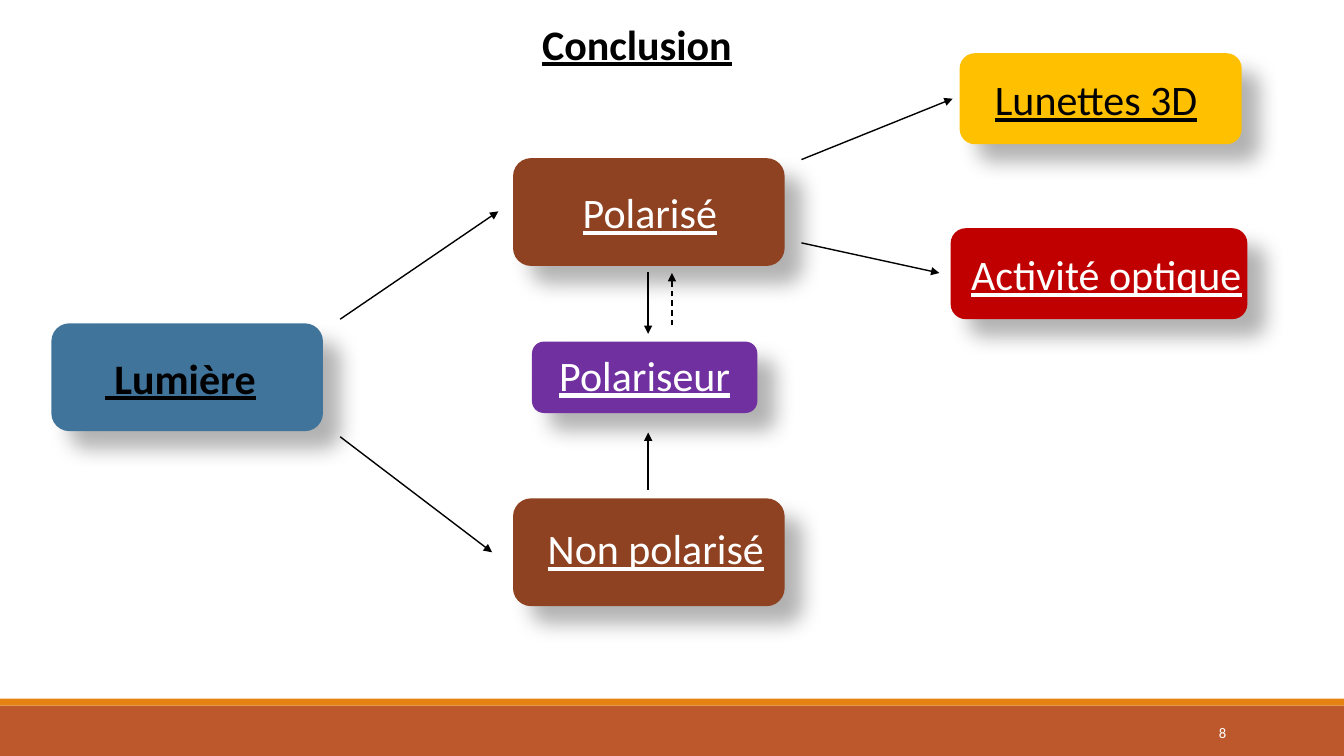
from dataclasses import dataclass

from lxml import etree
from pptx import Presentation
from pptx.dml.color import RGBColor
from pptx.enum import dml, shapes, text
from pptx.oxml import ns
from pptx.util import Pt


@dataclass(frozen=True)
class Theme:
    font: str = "Calibri"
    label_size: float = 30
    number_size: float = 10.5
    black: str = "000000"
    white: str = "FFFFFF"
    light: str = "40749B"
    state: str = "8E4221"
    polarizer: str = "7030A0"
    glasses: str = "FFC000"
    activity: str = "C00000"
    band: str = "BD582C"
    stripe: str = "E48312"


def add_child(parent, tag, **attributes):
    child = etree.SubElement(parent, ns.qn(tag))
    for name, value in attributes.items():
        child.set(name, str(value))
    return child


def write(frame, words, *, theme, color, size, bold=False, underline=False,
          align=text.PP_ALIGN.LEFT, anchor=text.MSO_ANCHOR.MIDDLE):
    frame.word_wrap = True
    frame.auto_size = text.MSO_AUTO_SIZE.NONE
    frame.vertical_anchor = anchor
    paragraph = frame.paragraphs[0]
    paragraph.alignment = align
    run = paragraph.add_run()
    run.text = words
    font = run.font
    font.name, font.size = theme.font, Pt(size)
    font.bold, font.underline = bold, underline
    font.color.rgb = RGBColor.from_string(color)


class Diagram:
    def __init__(self, slide, theme):
        self.slide = slide
        self.theme = theme

    def title(self, words, *box):
        heading = self.slide.shapes.title
        heading.left, heading.top, heading.width, heading.height = map(Pt, box)
        write(heading.text_frame, words, theme=self.theme, color=self.theme.black,
              size=self.theme.label_size, bold=True, underline=True,
              anchor=text.MSO_ANCHOR.TOP)

    def block(self, fill, *box, kind=shapes.MSO_SHAPE.RECTANGLE):
        block = self.slide.shapes.add_shape(kind, *map(Pt, box))
        block.shadow.inherit = False
        block.fill.solid()
        block.fill.fore_color.rgb = RGBColor.from_string(fill)
        block.line.fill.background()
        return block

    def node(self, words, fill, *box, indent, lift=0, color=None, bold=False):
        """Rounded box with a soft shadow; indent and lift place its label."""
        node = self.block(fill, *box, kind=shapes.MSO_SHAPE.ROUNDED_RECTANGLE)
        effects = node.element.spPr.find(ns.qn("a:effectLst"))
        shadow = add_child(effects, "a:outerShdw", blurRad=Pt(15), dist=Pt(18),
                           dir=45 * 60000, algn="tl", rotWithShape=0)
        shade = add_child(shadow, "a:srgbClr", val=self.theme.black)
        add_child(shade, "a:alpha", val=30000)
        frame = node.text_frame
        frame.margin_left, frame.margin_right = Pt(indent), 0
        frame.margin_top, frame.margin_bottom = 0, Pt(2 * lift)
        write(frame, words, theme=self.theme, color=color or self.theme.white,
              size=self.theme.label_size, bold=bold, underline=True)

    def arrow(self, start, end, dashed=False):
        arrow = self.slide.shapes.add_connector(
            shapes.MSO_CONNECTOR.STRAIGHT, *map(Pt, start + end))
        arrow.line.width = Pt(1)
        arrow.line.color.rgb = RGBColor.from_string(self.theme.black)
        if dashed:
            arrow.line.dash_style = dml.MSO_LINE.DASH
        properties = arrow.element.spPr
        add_child(properties.find(ns.qn("a:ln")), "a:tailEnd", type="triangle")
        add_child(properties, "a:effectLst")

    def page_number(self, number, *box):
        label = self.slide.shapes.add_textbox(*map(Pt, box))
        write(label.text_frame, number, theme=self.theme, color=self.theme.white,
              size=self.theme.number_size, align=text.PP_ALIGN.RIGHT)


def main():
    deck = Presentation()
    deck.slide_width, deck.slide_height = Pt(960), Pt(540)
    theme = Theme()
    diagram = Diagram(deck.slides.add_slide(deck.slide_layouts[5]), theme)

    diagram.block(theme.band, 0, 504, 960, 36)
    diagram.block(theme.stripe, 0, 499, 960, 5)
    diagram.title("Conclusion", 380, 9.4, 403, 44)

    large, small, wide = (194, 77), (161, 51), (212, 65)
    diagram.node(" Lumière", theme.light, 36.7, 231, *large,
                 indent=34.5, color=theme.black, bold=True)
    diagram.node("Polarisé", theme.state, 366.5, 113, *large, indent=46)
    diagram.node("Non polarisé", theme.state, 366.5, 356, *large, indent=21, lift=3)
    diagram.node("Polariseur", theme.polarizer, 380, 244, *small, indent=17, lift=2)
    diagram.node("Lunettes 3D", theme.glasses, 685.5, 38, 201.5, 65,
                 indent=22, color=theme.black)
    diagram.node("Activité optique", theme.activity, 679, 163, *wide, indent=11.5)

    for start, end in (
        ((243, 228), (356, 151)),
        ((243, 312), (351.5, 394.5)),
        ((463, 194.5), (463, 238.5)),
        ((463, 350), (463, 309)),
        ((572.5, 114), (680.5, 70.5)),
        ((572.5, 173.5), (671, 195)),
    ):
        diagram.arrow(start, end)
    diagram.arrow((480, 232.5), (480, 195), dashed=True)

    diagram.page_number("8", 780, 508.5, 103, 29)
    deck.save("out.pptx")


if __name__ == "__main__":
    main()
